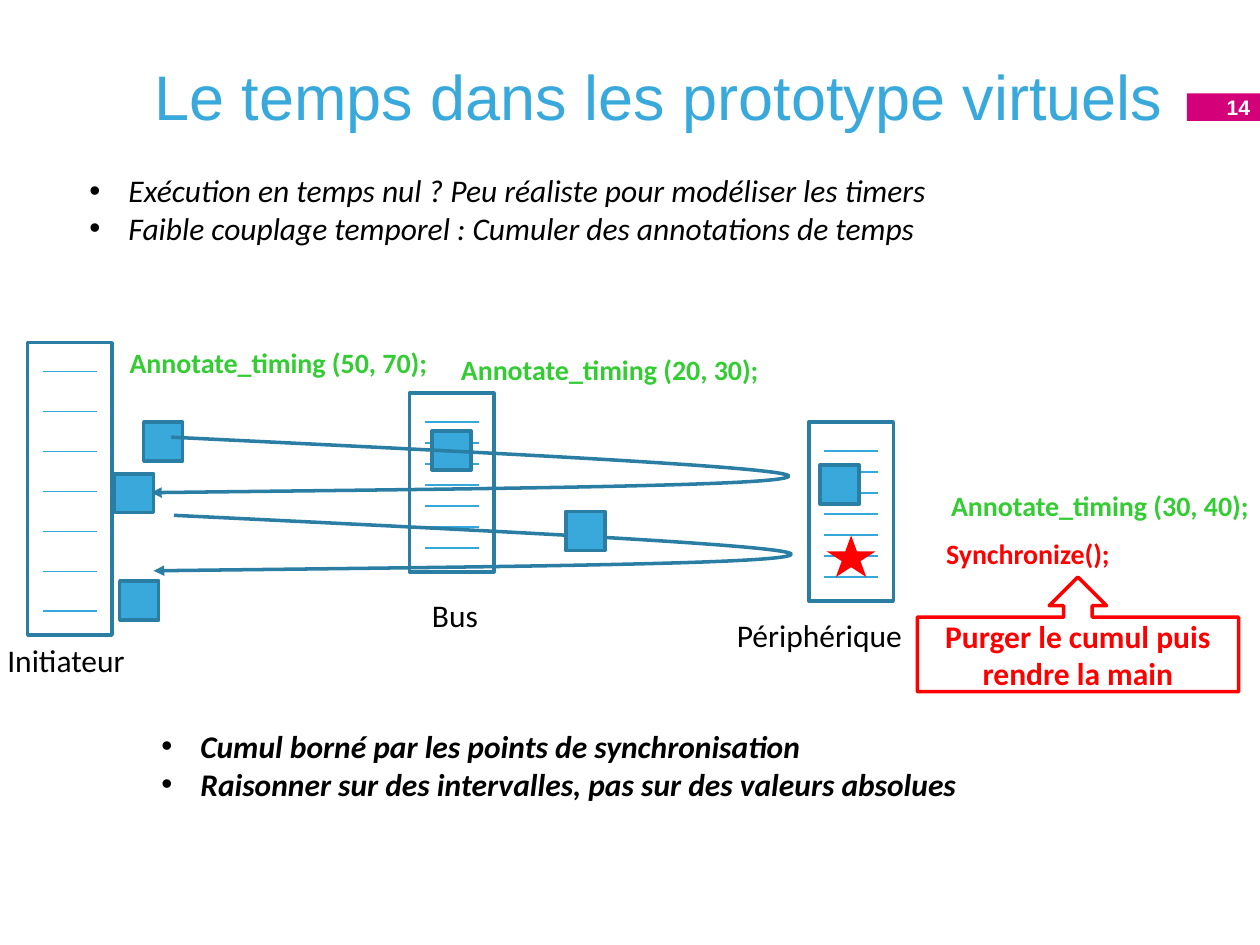
from lxml.etree import SubElement
from pptx import Presentation
from pptx.dml.color import RGBColor
from pptx.enum.shapes import MSO_SHAPE as Preset
from pptx.enum.text import MSO_ANCHOR as Anchor, MSO_AUTO_SIZE as AutoSize, PP_ALIGN as Align
from pptx.oxml.ns import qn
from pptx.util import Inches, Pt

COLORS = {
    "title": "39A9DC",
    "token": "39A9DC",
    "outline": "2A7DA3",
    "code_line": "34A7DB",
    "number": "D4007A",
    "timing": "33CC33",
    "sync": "FF0000",
    "text": "000000",
    "white": "FFFFFF",
}


def rgb(name):
    """Return the palette colour called name."""
    return RGBColor.from_string(COLORS[name])


def place(item, left, top, width, height):
    """Move and size an item, in inches."""
    item.left, item.top = Inches(left), Inches(top)
    item.width, item.height = Inches(width), Inches(height)


def add_text(paragraph, words, size, color, font="Calibri", bold=False, italic=False):
    """Add one formatted run to a paragraph."""
    run = paragraph.add_run()
    run.text = words
    run.font.name, run.font.size = font, Pt(size)
    run.font.bold, run.font.italic = bold, italic
    run.font.color.rgb = rgb(color)


def style_outline(shape, color):
    """Give a shape a two-point outline, or none."""
    shape.shadow.inherit = False
    if color:
        shape.line.color.rgb = rgb(color)
        shape.line.width = Pt(2)
    else:
        shape.line.fill.background()


def add_figure(shapes, preset, left, top, width, height, fill=None, outline=None):
    """Add a preset shape with a flat fill and outline."""
    figure = shapes.add_shape(preset, Inches(left), Inches(top), Inches(width), Inches(height))
    if fill:
        figure.fill.solid()
        figure.fill.fore_color.rgb = rgb(fill)
    else:
        figure.fill.background()
    style_outline(figure, outline)
    return figure


def add_component(slide, left, top, height):
    """Add a hardware component holding seven evenly spaced code lines."""
    parts = slide.shapes.add_group_shape().shapes
    add_figure(parts, Preset.RECTANGLE, left, top, 0.67, height, outline="outline")
    step = (height - 0.42) / 6
    for row in range(7):
        y = Inches(top + 0.23 + row * step)
        code_line = parts.add_connector(1, Inches(left + 0.12), y, Inches(left + 0.55), y)
        code_line.line.color.rgb = rgb("code_line")
        code_line.line.width = Pt(0.75)
        SubElement(code_line._element.spPr, qn("a:effectLst"))


def add_token(slide, left, top):
    """Add a square transaction token."""
    add_figure(slide.shapes, Preset.RECTANGLE, left, top, 0.31, 0.31, "token", "outline")


def add_label(slide, words, left, top, width, height, size, color, bold=False):
    """Add a one-line label."""
    label = slide.shapes.add_textbox(Inches(left), Inches(top), Inches(width), Inches(height))
    label.text_frame.word_wrap = False
    label.text_frame.auto_size = AutoSize.SHAPE_TO_FIT_TEXT
    add_text(label.text_frame.paragraphs[0], words, size, color, bold=bold)


def add_round_trip(slide, left, top):
    """Add a curved call that returns with an arrowhead."""
    def point(x, y):
        return Inches(left + x), Inches(top + y)

    start, turn, end = point(0.16, 0), point(5.06, 0.31), point(0, 0.44)
    controls = [
        (point(2.62, 0.12), point(5.09, 0.24)),
        (point(5.03, 0.39), point(2.52, 0.41)),
    ]
    builder = slide.shapes.build_freeform(*start)
    builder.add_line_segments([turn, end], close=False)
    trip = builder.convert_to_shape()
    for segment, pair in zip(list(trip._element.iter(qn("a:lnTo"))), controls):
        segment.tag = qn("a:cubicBezTo")
        for index, (x, y) in enumerate(pair):
            control = SubElement(segment, qn("a:pt"), x=str(x - trip.left), y=str(y - trip.top))
            segment.insert(index, control)
    trip.fill.background()
    style_outline(trip, "outline")
    SubElement(trip.line._get_or_add_ln(), qn("a:tailEnd"), type="triangle")


def fill_title(title, words):
    """Place and write the slide title."""
    place(title, 0.5, 0.13, 8.83, 1.25)
    frame = title.text_frame
    frame.auto_size, frame.vertical_anchor = AutoSize.NONE, Anchor.MIDDLE
    frame.paragraphs[0].alignment = Align.RIGHT
    add_text(frame.paragraphs[0], words, 36, "title", "Arial")


def fill_list(body, items, left, top, bold=False):
    """Place a body placeholder and write its bulleted items."""
    place(body, left, top, 7.76, 1.31)
    frame = body.text_frame
    frame.auto_size, frame.vertical_anchor = AutoSize.NONE, Anchor.TOP
    for index, item in enumerate(items):
        paragraph = frame.add_paragraph() if index else frame.paragraphs[0]
        paragraph.space_before = Pt(0)
        properties = paragraph._p.get_or_add_pPr()
        properties.set("marL", str(Inches(0.31)))
        properties.set("indent", str(-Inches(0.31)))
        SubElement(properties, qn("a:buFont"), typeface="Arial")
        SubElement(properties, qn("a:buChar"), char="•")
        add_text(paragraph, item, 18, "text", bold=bold, italic=True)


def add_slide_number(slide, number):
    """Add the slide number tab at the right edge."""
    tab = add_figure(slide.shapes, Preset.RECTANGLE, 9.42, 0.74, 0.6, 0.22, "number")
    tab.text_frame.word_wrap = False
    tab.text_frame.vertical_anchor = Anchor.MIDDLE
    tab.text_frame.paragraphs[0].alignment = Align.RIGHT
    add_text(tab.text_frame.paragraphs[0], number, 12, "white", "Arial", bold=True)


def add_sync_callout(slide, lines):
    """Add the callout that explains the synchronisation."""
    callout = add_figure(slide.shapes, Preset.UP_ARROW_CALLOUT, 7.28, 4.58, 2.55, 0.91, outline="sync")
    callout.text_frame.vertical_anchor = Anchor.MIDDLE
    paragraph = callout.text_frame.paragraphs[0]
    paragraph.alignment = Align.CENTER
    for index, line in enumerate(lines):
        if index:
            paragraph.add_line_break()
        add_text(paragraph, line, 18, "sync", bold=True)


def main():
    """Build the slide and save it."""
    deck = Presentation()
    deck.slide_width, deck.slide_height = Inches(10), Inches(7.5)
    slide = deck.slides.add_slide(deck.slide_layouts[3])
    title, context, conclusion = slide.placeholders

    fill_title(title, "Le temps dans les prototype virtuels")
    fill_list(context, [
        "Exécution en temps nul ? Peu réaliste pour modéliser les timers",
        "Faible couplage temporel : Cumuler des annotations de temps",
    ], 0.61, 1.31)
    fill_list(conclusion, [
        "Cumul borné par les points de synchronisation",
        "Raisonner sur des intervalles, pas sur des valeurs absolues",
    ], 1.18, 5.72, bold=True)
    add_slide_number(slide, "14")

    for left, top, height in [(6.42, 3.35, 1.42), (0.22, 2.72, 2.32), (3.25, 3.12, 1.42)]:
        add_component(slide, left, top, height)
    for left, top in [(3.43, 3.42), (1.14, 3.35)]:
        add_token(slide, left, top)
    add_round_trip(slide, 1.2, 3.47)
    add_round_trip(slide, 1.22, 4.09)
    for left, top in [(4.49, 4.06), (6.51, 3.69), (0.91, 3.76), (0.95, 4.61)]:
        add_token(slide, left, top)

    for interval, left, top in [("50, 70", 0.93, 2.69), ("20, 30", 3.56, 2.75), ("30, 40", 7.45, 3.83)]:
        add_label(slide, f"Annotate_timing ({interval});", left, top, 2.6, 0.37, 16, "timing", True)
    for name, left, top, width in [
        ("Initiateur", -0.04, 5.04, 1.15),
        ("Périphérique", 5.75, 4.84, 1.53),
        ("Bus", 3.33, 4.68, 0.57),
    ]:
        add_label(slide, name, left, top, width, 0.4, 18, "text")

    add_figure(slide.shapes, Preset.STAR_5_POINT, 6.56, 4.25, 0.39, 0.33, "sync")
    add_label(slide, "Synchronize();", 7.41, 4.21, 1.52, 0.37, 16, "sync", True)
    add_sync_callout(slide, ["Purger le cumul puis", "rendre la main"])
    deck.save("out.pptx")


if __name__ == "__main__":
    main()
